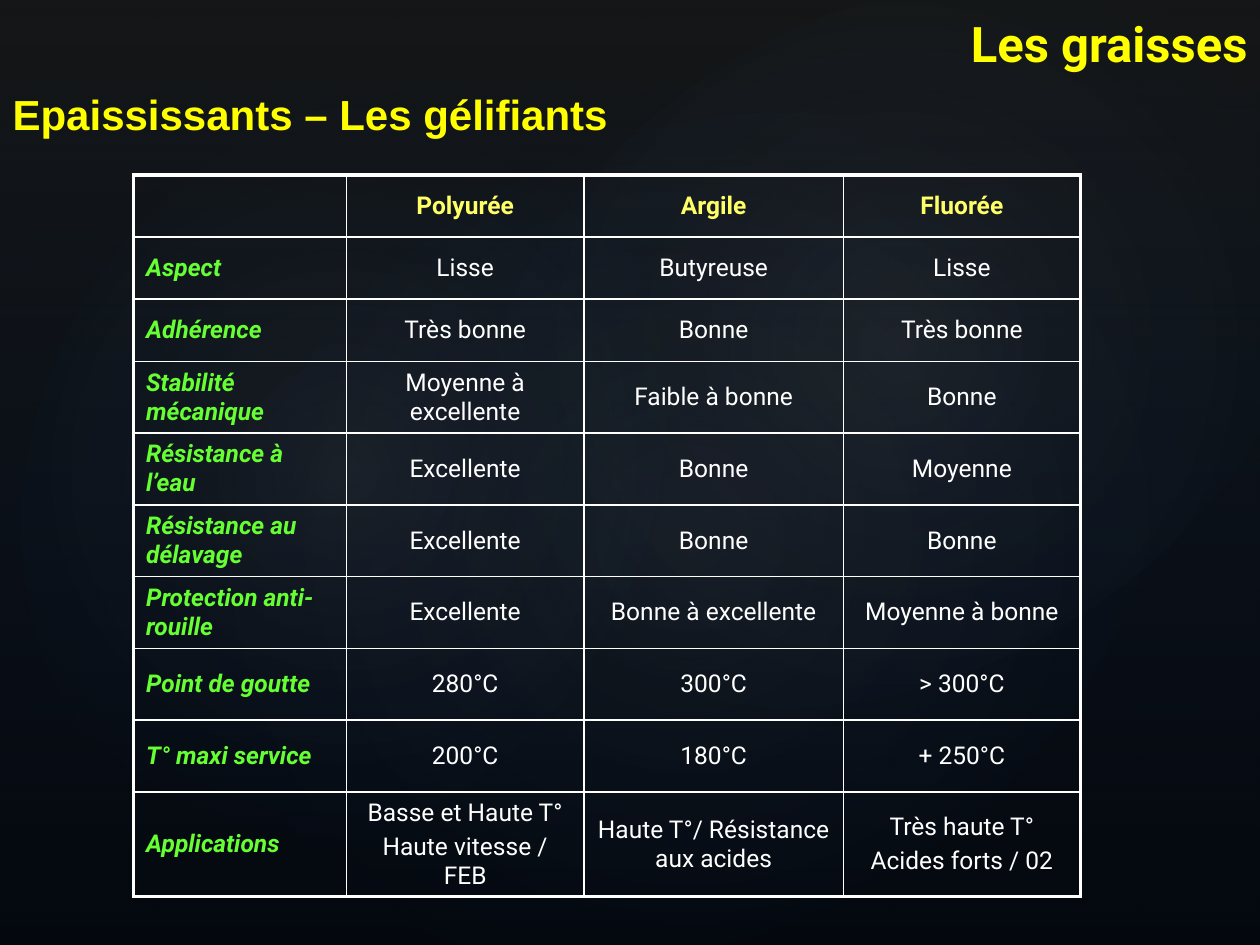
"""Build the slide on grease thickeners."""
from dataclasses import dataclass

import pptx
import pptx.dml.color
import pptx.enum.shapes
import pptx.enum.text
import pptx.oxml
import pptx.oxml.ns
import pptx.util

WIDE = pptx.util.Inches(10)
HIGH = pptx.util.Inches(7.5)
ALIGN = pptx.enum.text.PP_ALIGN
SHAPE = pptx.enum.shapes.MSO_SHAPE
MIDDLE = pptx.enum.text.MSO_ANCHOR.MIDDLE
SPACE = pptx.oxml.ns.nsdecls("a")
LINEAR = '<a:lin ang="5400000" scaled="0"/>'
RADIAL = ('<a:path path="circle"><a:fillToRect l="50000" t="50000" '
          'r="50000" b="50000"/></a:path>')


@dataclass
class Box:
    """A place in percent of the slide's width and height."""
    left: float
    top: float
    width: float
    height: float

    def place(self) -> tuple[int, int, int, int]:
        """Return left, top, width and height as lengths."""
        return (across(self.left), down(self.top),
                across(self.width), down(self.height))


@dataclass
class Stop:
    """A gradient stop: position, colour and opacity in percent."""
    pos: int
    hue: str
    alpha: int


@dataclass
class Glow:
    """A see-through gradient shape of the backdrop."""
    box: Box
    kind: SHAPE
    turn: float
    stops: list[Stop]
    mode: str


@dataclass
class Style:
    """The look of a paragraph."""
    size: float
    face: str
    hue: str
    bold: bool
    slant: bool
    align: ALIGN


HEAD = Style(14, "Roboto", "FFFF66", True, False, ALIGN.CENTER)
LABEL = Style(14, "Roboto", "66FF33", True, True, ALIGN.LEFT)
VALUE = Style(14, "Roboto", "FFFFFF", False, False, ALIGN.CENTER)
TITLE = Style(28, "Roboto", "FFFF00", True, False, ALIGN.RIGHT)
TOPIC = Style(24, "Arial", "FFFF00", True, False, ALIGN.LEFT)


def halo(box: Box, turn: float, alpha: int) -> Glow:
    """Describe one round glow."""
    stops = [Stop(0, "ACB3B6", alpha), Stop(58, "2F5897", 0), Stop(100, "2F5897", 0)]
    return Glow(box, SHAPE.OVAL, turn, stops, RADIAL)


GLOWS = [
    Glow(Box(0, 0, 100, 100), SHAPE.RECTANGLE, 0,
         [Stop(0, "3B4042", 36), Stop(100, "2F5897", 10)], LINEAR),
    halo(Box(15, 15.2, 79.2, 83.2), 328.7, 7),
    halo(Box(-3, 17.07, 60.6, 65.33), 294.3, 8),
    halo(Box(35.8, 1.73, 70.9, 69.33), 328.7, 8),
]
COLS = [16.9, 18.85, 20.6, 18.8]
ROWS = [6.57] * 3 + [7.6] * 6 + [8.27]
GRID = Box(10.6, 18.53, sum(COLS), sum(ROWS))
CELLS = [
    ["", "Polyurée", "Argile", "Fluorée"],
    ["Aspect", "Lisse", "Butyreuse", "Lisse"],
    ["Adhérence", "Très bonne", "Bonne", "Très bonne"],
    ["Stabilité mécanique", "Moyenne à excellente", "Faible à bonne", "Bonne"],
    ["Résistance à l’eau", "Excellente", "Bonne", "Moyenne"],
    ["Résistance au délavage", "Excellente", "Bonne", "Bonne"],
    ["Protection anti-rouille", "Excellente", "Bonne à excellente", "Moyenne à bonne"],
    ["Point de goutte", "280°C", "300°C", "> 300°C"],
    ["T° maxi service", "200°C", "180°C", "+ 250°C"],
    ["Applications", "Basse et Haute T°\nHaute vitesse / FEB",
     "Haute T°/ Résistance aux acides", "Très haute T°\nAcides forts / 02"],
]


def across(share: float) -> int:
    """Turn a percentage of the slide's width into a length."""
    return round(WIDE * share / 100)


def down(share: float) -> int:
    """Turn a percentage of the slide's height into a length."""
    return round(HIGH * share / 100)


def tint(code: str) -> pptx.dml.color.RGBColor:
    """Turn a hex string into a colour."""
    return pptx.dml.color.RGBColor.from_string(code)


def draw_glow(slide, glow: Glow) -> None:
    """Draw one gradient shape of the backdrop."""
    shape = slide.shapes.add_shape(glow.kind, *glow.box.place())
    shape.rotation = glow.turn
    shape.shadow.inherit = False
    shape.line.fill.background()
    shape.fill.background()
    stops = "".join(
        f'<a:gs pos="{s.pos * 1000}"><a:srgbClr val="{s.hue}">'
        f'<a:alpha val="{s.alpha * 1000}"/></a:srgbClr></a:gs>' for s in glow.stops)
    fade = pptx.oxml.parse_xml(
        f'<a:gradFill {SPACE} rotWithShape="1"><a:gsLst>{stops}</a:gsLst>'
        f'{glow.mode}</a:gradFill>')
    props = shape._element.spPr
    props.replace(props.find(pptx.oxml.ns.qn("a:noFill")), fade)


def write(frame, text: str, style: Style, gap: int) -> None:
    """Fill a text frame, with a gap before paragraphs in percent."""
    frame.text = text
    for para in frame.paragraphs:
        para.alignment = style.align
        font = para.font
        font.size = pptx.util.Pt(style.size)
        font.name = style.face
        font.bold = style.bold
        font.italic = style.slant
        font.color.rgb = tint(style.hue)
        props = para._p.get_or_add_pPr()
        props.set("marL", "0")
        props.set("indent", "0")
        props.insert(0, pptx.oxml.parse_xml(
            f'<a:spcBef {SPACE}><a:spcPct val="{gap * 1000}"/></a:spcBef>'))
        props.insert(1, pptx.oxml.parse_xml(f'<a:buNone {SPACE}/>'))


def rule(cell, row: int, col: int) -> None:
    """Draw the borders of a cell, thicker at the table's edge."""
    edges = {"L": col == 0, "R": col == len(COLS) - 1,
             "T": row == 0, "B": row == len(ROWS) - 1}
    props = cell._tc.get_or_add_tcPr()
    for side, outer in edges.items():
        width = pptx.util.Pt(2.25 if outer else 1)
        props.append(pptx.oxml.parse_xml(
            f'<a:ln{side} {SPACE} w="{width}"><a:solidFill>'
            f'<a:srgbClr val="FFFFFF"/></a:solidFill></a:ln{side}>'))


def draw_table(slide) -> None:
    """Draw the table of thickeners."""
    table = slide.shapes.add_table(len(ROWS), len(COLS), *GRID.place()).table
    table.first_row = table.horz_banding = False
    for col, share in enumerate(COLS):
        table.columns[col].width = across(share)
    for row, share in enumerate(ROWS):
        table.rows[row].height = down(share)
        for col, text in enumerate(CELLS[row]):
            cell = table.cell(row, col)
            style = HEAD if row == 0 else LABEL if col == 0 else VALUE
            write(cell.text_frame, text, style, 20)
            cell.vertical_anchor = MIDDLE
            rule(cell, row, col)
            cell.fill.background()


def set_text(slide, holder, box: Box, text: str, style: Style) -> None:
    """Move a placeholder to the front, place it and fill it."""
    slide.shapes._spTree.append(holder._element)
    holder.left, holder.top, holder.width, holder.height = box.place()
    frame = holder.text_frame
    frame.word_wrap = True
    frame.auto_size = pptx.enum.text.MSO_AUTO_SIZE.NONE
    frame.vertical_anchor = MIDDLE
    write(frame, text, style, 0)


def main() -> None:
    """Build and save the slide."""
    deck = pptx.Presentation()
    deck.slide_width, deck.slide_height = WIDE, HIGH
    slide = deck.slides.add_slide(deck.slide_layouts[1])
    back = slide.background.fill
    back.solid()
    back.fore_color.rgb = tint("000000")
    title, body = slide.placeholders
    for glow in GLOWS:
        draw_glow(slide, glow)
    draw_table(slide)
    set_text(slide, title, Box(70.5, 0, 29.5, 9.07), "Les graisses", TITLE)
    set_text(slide, body, Box(0, 8, 100, 8), "Epaississants – Les gélifiants", TOPIC)
    deck.save("out.pptx")


if __name__ == "__main__":
    main()
